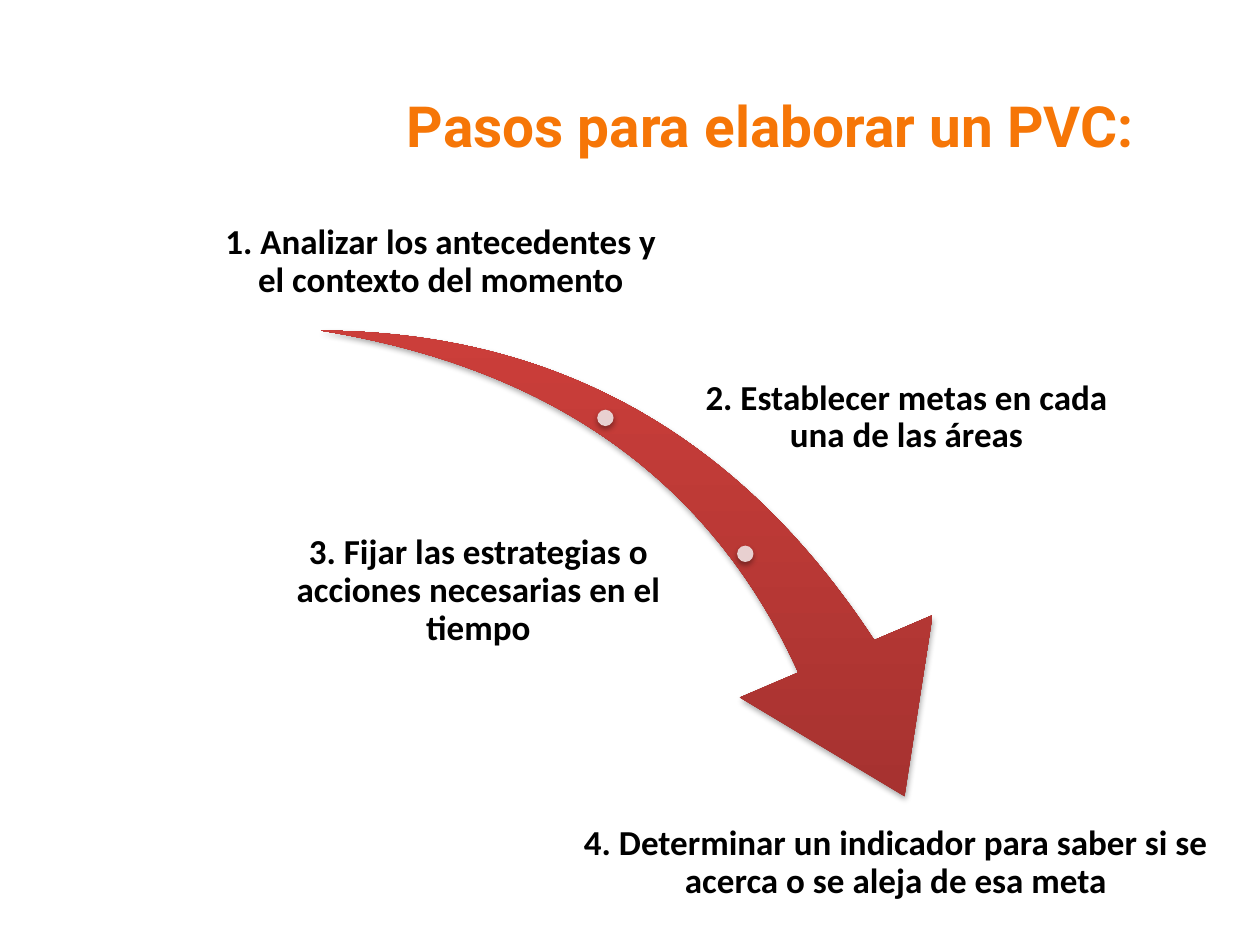
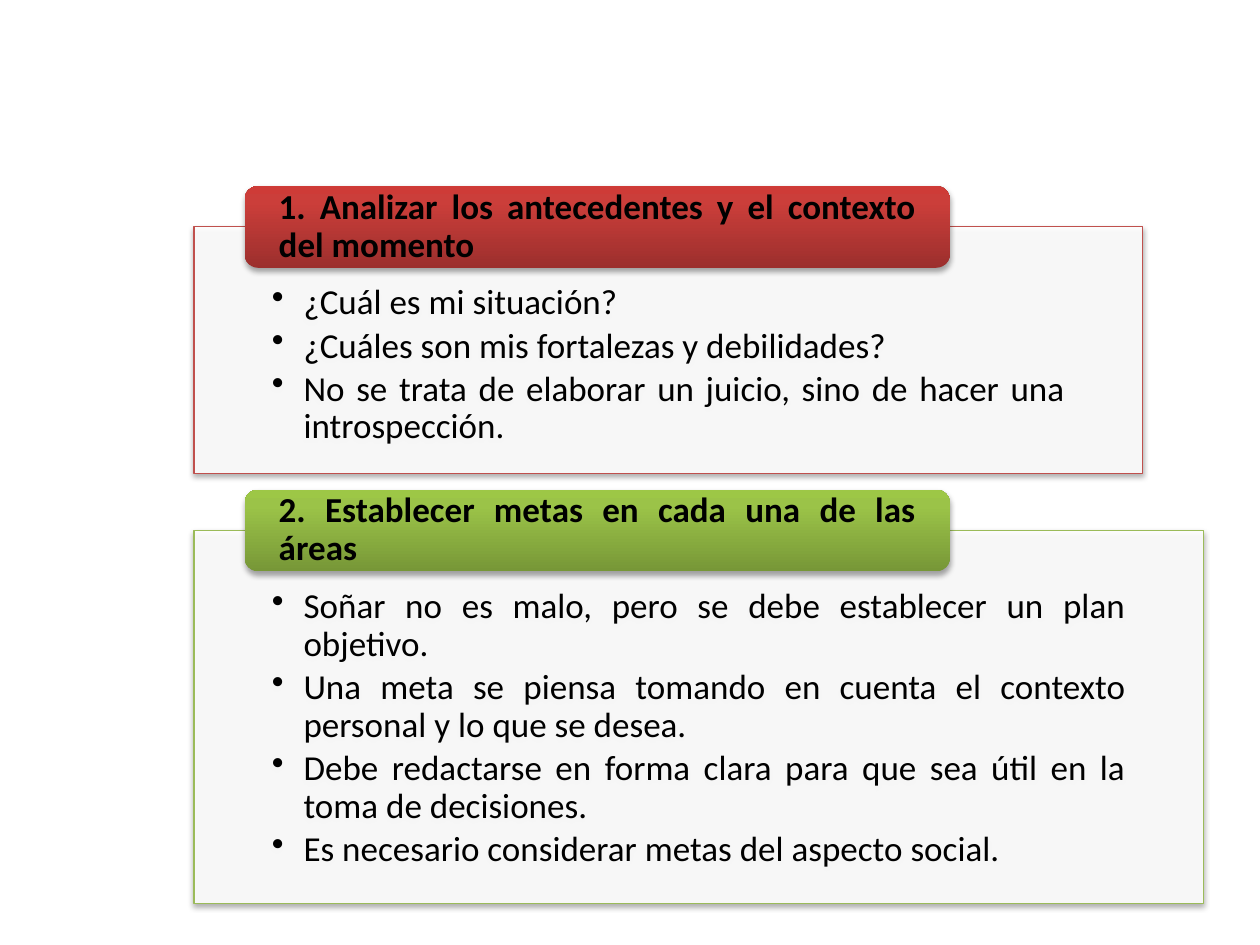
import pptx
import pptx.util
import pptx.dml.color
import pptx.enum.shapes
import pptx.enum.text
import pptx.oxml
import pptx.oxml.ns

Cm, Pt = pptx.util.Cm, pptx.util.Pt
KIND = pptx.enum.shapes.MSO_SHAPE
ALIGN = pptx.enum.text.PP_ALIGN
ANCHOR = pptx.enum.text.MSO_ANCHOR
qn = pptx.oxml.ns.qn
NS = pptx.oxml.ns.nsdecls("a")

HUES = {"title": "F67607", "text": "000000", "panel": "FFFFFF", "dot": "E8D0D0",
        "red": "C0504D", "green": "9BBB59"}
# Gradient stops: (position in percent, colour)
FADES = {"red": ((0, "9C2F2D"), (80, "CB3E3A"), (100, "CE3B37")),
         "green": ((0, "779737"), (80, "9BC348"), (100, "9DC746"))}
FONTS = {"title": "Roboto", "text": "Calibri"}

STEPS = ["1. Analizar los antecedentes y el contexto del momento",
         "2. Establecer metas en cada una de las áreas",
         "3. Fijar las estrategias o acciones necesarias en el tiempo",
         "4. Determinar un indicador para saber si se acerca o se aleja de esa meta"]


def tint(name):
    return pptx.dml.color.RGBColor.from_string(HUES[name])


def shade(shape):
    """Give a soft shadow straight below the shape."""
    shape.shadow.inherit = False
    shape._element.spPr.find(qn("a:effectLst")).append(pptx.oxml.parse_xml(
        f'<a:outerShdw {NS} blurRad="40000" dist="23000" dir="5400000" rotWithShape="0">'
        '<a:srgbClr val="000000"><a:alpha val="35000"/></a:srgbClr></a:outerShdw>'))


def fade(shape, hue):
    """Fill with a three-stop gradient that runs upwards."""
    shape.fill.gradient()
    shape.fill.gradient_angle = 90
    grad = shape._element.spPr.find(qn("a:gradFill"))
    grad.set("rotWithShape", "0")
    stops = grad.find(qn("a:gsLst"))
    for old in list(stops):
        stops.remove(old)
    for pos, color in FADES[hue]:
        stops.append(pptx.oxml.parse_xml(
            f'<a:gs {NS} pos="{pos * 1000}"><a:srgbClr val="{color}"/></a:gs>'))


def add_form(slide, kind, left, top, width, height):
    shape = slide.shapes.add_shape(kind, Cm(left), Cm(top), Cm(width), Cm(height))
    shape.line.fill.background()
    shade(shape)
    return shape


def set_frame(frame, anchor, insets):
    frame.word_wrap = True
    frame.vertical_anchor = anchor
    (frame.margin_left, frame.margin_top,
     frame.margin_right, frame.margin_bottom) = map(Cm, insets)


def write(frame, lines, align, size=20, bold=True, face="text", hue="text",
          lead=0.9, gap=0, bullet=False):
    for i, line in enumerate(lines):
        para = frame.add_paragraph() if i else frame.paragraphs[0]
        para.text = line
        para.alignment = align
        para.line_spacing = lead
        para.space_after = Pt(gap)
        if bullet:
            props = para._p.get_or_add_pPr()
            props.set("marL", str(Cm(0.64)))
            props.set("indent", str(-Cm(0.64)))
            props.append(pptx.oxml.parse_xml(f'<a:buChar {NS} char="•"/>'))
        font = para.font
        font.name, font.size, font.bold = FONTS[face], Pt(size), bold
        font.color.rgb = tint(hue)


def add_label(slide, text, box, anchor, insets=(0.08,) * 4, **style):
    frame = slide.shapes.add_textbox(*map(Cm, box)).text_frame
    set_frame(frame, anchor, insets)
    write(frame, [text], ALIGN.CENTER, **style)


def add_panel(slide, top, width, height, hue, head, points):
    """Add a framed bullet list with a heading tab over its top edge."""
    panel = add_form(slide, KIND.RECTANGLE, 3.91, top, width, height)
    panel.fill.solid()
    panel.fill.fore_color.rgb = tint("panel")
    color = panel._element.spPr.find(qn("a:solidFill"))[0]
    color.append(pptx.oxml.parse_xml(f'<a:alpha {NS} val="90000"/>'))
    panel.line.color.rgb = tint(hue)
    panel.line.width = Pt(0.75)
    set_frame(panel.text_frame, ANCHOR.TOP, (1.57, 1.17, 1.57, 0.41))
    write(panel.text_frame, points, ALIGN.JUSTIFY, bold=False, gap=3, bullet=True)

    tab = add_form(slide, KIND.ROUNDED_RECTANGLE, 4.93, top - 0.82, 14.22, 1.65)
    fade(tab, hue)
    set_frame(tab.text_frame, ANCHOR.MIDDLE, (0.61, 0, 0.61, 0))
    write(tab.text_frame, [head], ALIGN.JUSTIFY)


def draw_steps(slide):
    # Curved arrow with its dots
    arrow = add_form(slide, KIND.SWOOSH_ARROW, 6.93, 6.05, 12.37, 10.16)
    arrow.adjustments[0], arrow.adjustments[1] = 0.163, 0.314
    arrow.rotation = 73.3
    fade(arrow, "red")
    for left, top in ((12.04, 8.26), (14.86, 11)):
        dot = add_form(slide, KIND.OVAL, left, top, 0.33, 0.33)
        dot.fill.solid()
        dot.fill.fore_color.rgb = tint("dot")

    # Steps along the arrow
    spots = [((4.29, 3.76, 9.19, 2.36), ANCHOR.BOTTOM),
             ((13.87, 7.24, 8.81, 2.36), ANCHOR.MIDDLE),
             ((4.83, 10.74, 9.63, 2.36), ANCHOR.MIDDLE),
             ((11.61, 16.56, 12.9, 1.57), ANCHOR.TOP)]
    for text, (box, anchor) in zip(STEPS, spots):
        add_label(slide, text, box, anchor)

    # Title
    add_label(slide, "Pasos para elaborar un PVC:", (7.11, 1.27, 16.84, 2.49),
              ANCHOR.MIDDLE, (0.25, 0.13, 0.25, 0.13),
              size=32.4, face="title", hue="title", lead=1)


def draw_panels(slide):
    add_panel(slide, 4.57, 19.13, 4.98, "red", STEPS[0], [
        "¿Cuál es mi situación?",
        "¿Cuáles son mis fortalezas y debilidades?",
        "No se trata de elaborar un juicio, sino de hacer una introspección."])
    add_panel(slide, 10.69, 20.35, 7.52, "green", STEPS[1], [
        "Soñar no es malo, pero se debe establecer un plan objetivo.",
        "Una meta se piensa tomando en cuenta el contexto personal y lo que se desea.",
        "Debe redactarse en forma clara para que sea útil en la toma de decisiones.",
        "Es necesario considerar metas del aspecto social."])


def main():
    deck = pptx.Presentation()
    deck.slide_width, deck.slide_height = Cm(25.4), Cm(19.05)
    blank = deck.slide_layouts[6]
    for draw in (draw_steps, draw_panels):
        draw(deck.slides.add_slide(blank))
    deck.save("out.pptx")


if __name__ == "__main__":
    main()
